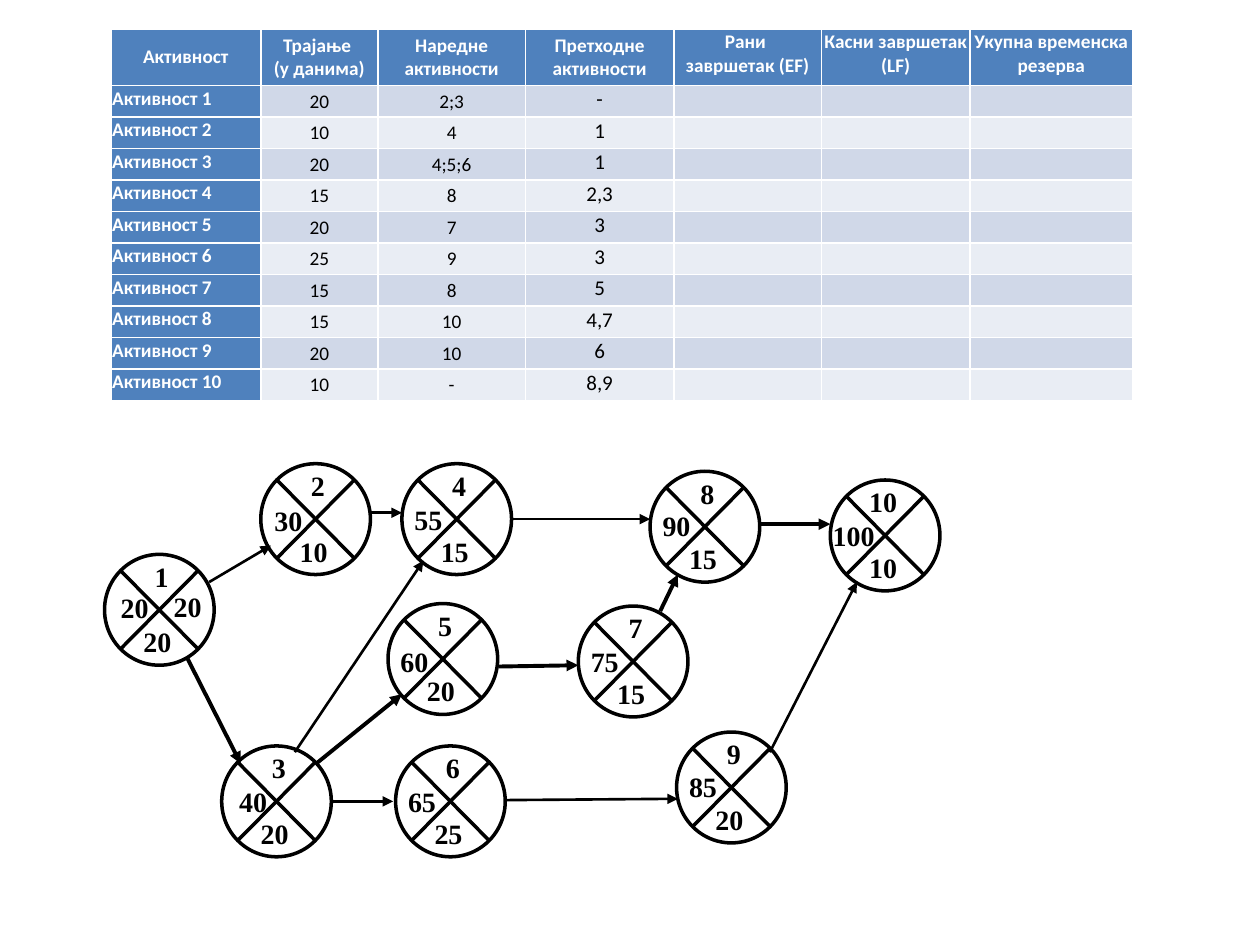
import lxml.etree
import pptx
import pptx.util
import pptx.dml.color
import pptx.enum.shapes
import pptx.enum.text
import pptx.oxml.ns

Inches, Pt = pptx.util.Inches, pptx.util.Pt
RGB = pptx.dml.color.RGBColor
qn = pptx.oxml.ns.qn
CENTER = pptx.enum.text.PP_ALIGN.CENTER
LEFT = pptx.enum.text.PP_ALIGN.LEFT
MIDDLE = pptx.enum.text.MSO_ANCHOR.MIDDLE
TOP = pptx.enum.text.MSO_ANCHOR.TOP
JUNCTION = pptx.enum.shapes.MSO_SHAPE.FLOWCHART_SUMMING_JUNCTION
STRAIGHT = pptx.enum.shapes.MSO_CONNECTOR.STRAIGHT

BLACK = RGB(0x00, 0x00, 0x00)
WHITE = RGB(0xFF, 0xFF, 0xFF)
BLUE = RGB(0x4F, 0x81, 0xBD)
BAND_DARK = RGB(0xD0, 0xD8, 0xE8)
BAND_LIGHT = RGB(0xE9, 0xED, 0xF4)


def set_font(font, color, **values):
    font.color.rgb = color
    for name, value in values.items():
        setattr(font, name, value)


def add_number(shapes, text, x, y, w):
    tf = shapes.add_textbox(Inches(x), Inches(y), Inches(w), Inches(0.37)).text_frame
    tf.word_wrap = True
    r = tf.paragraphs[0].add_run()
    r.text = text
    set_font(r.font, BLACK, size=Pt(16), name="Times New Roman", bold=True)


prs = pptx.Presentation()
prs.slide_width, prs.slide_height = Inches(10), Inches(7.5)
s = prs.slides.add_slide(prs.slide_layouts[6])

# Activity table
header = ["Активност", "Трајање \n(у данима)", "Наредне активности",
          "Претходне активности", "Рани \nзавршетак (ЕF)",
          "Касни завршетак (LF)", "Укупна временска резерва"]
# duration, following activities, preceding activities
activities = [("20", "2;3", "-"), ("10", "4", "1"), ("20", "4;5;6", "1"),
              ("15", "8", "2,3"), ("20", "7", "3"), ("25", "9", "3"),
              ("15", "8", "5"), ("15", "10", "4,7"), ("20", "10", "6"),
              ("10", "-", "8,9")]
rows = [header]
for n, values in enumerate(activities, 1):
    rows.append([f"Активност {n}", *values, "", "", ""])

table = s.shapes.add_table(len(rows), len(header), Inches(0.88), Inches(0.23),
                           Inches(8.11), Inches(2.95)).table
table.first_col = True
for col, w in zip(table.columns, [1.19, 0.93, 1.17, 1.18, 1.17, 1.18, 1.29]):
    col.width = Inches(w)

for i, row in enumerate(rows):
    table.rows[i].height = Inches(0.25 if i else 0.45)
    for j, text in enumerate(row):
        cell = table.cell(i, j)
        heading = i == 0 or j == 0
        centered_rows = j < 4 if i == 0 else j in (1, 2)
        cell.vertical_anchor = MIDDLE if centered_rows else TOP
        for side in ("left", "top", "right", "bottom"):
            setattr(cell, f"margin_{side}", Inches(0.01))
        cell.fill.solid()
        cell.fill.fore_color.rgb = BLUE if heading else BAND_DARK if i % 2 else BAND_LIGHT
        cell.text = text
        for p in cell.text_frame.paragraphs:
            p.alignment = LEFT if i and j == 0 else CENTER
            for r in p.runs:
                set_font(r.font, WHITE if heading else BLACK, name="Calibri", bold=heading,
                         size=Pt(12 if i and j == 3 else 11))
            if not text:  # keeps empty cells from stretching the row
                lxml.etree.SubElement(p._p, qn("a:endParaRPr"), sz="1100")

# Network nodes: left, top, early finish, and the offset of that finish
nodes = [(0.83, 4.40, "20", 0.03, 0.24), (2.07, 3.68, "30", 0.01, 0.27),
         (1.76, 5.92, "40", 0.04, 0.26), (3.19, 3.68, "55", 0, 0.26),
         (3.08, 4.79, "60", 0, 0.28), (3.14, 5.92, "65", 0, 0.26),
         (4.59, 4.81, "75", 0, 0.26), (5.16, 3.74, "90", 0, 0.25),
         (5.37, 5.81, "85", 0, 0.25), (6.59, 3.81, "100", -0.08, 0.26)]
for n, (x, y, finish, dx, dy) in enumerate(nodes, 1):
    shapes = s.shapes.add_group_shape().shapes
    sp = shapes.add_shape(JUNCTION, Inches(x), Inches(y), Inches(0.87), Inches(0.88))
    sp.shadow.inherit = False
    sp.fill.background()
    sp.line.color.rgb = BLACK
    sp.line.width = Pt(2)
    wide = n > 9
    add_number(shapes, str(n), x + (0.21 if wide else 0.3), y - 0.01, 0.42 if wide else 0.27)
    add_number(shapes, activities[n - 1][0], x + 0.21, y + 0.51, 0.52)
    add_number(shapes, finish, x + dx, y + dy, 0.56 if wide else 0.52)
    if n == 1:
        add_number(shapes, "20", x + 0.45, y + 0.23, 0.52)

# Arrows by line width; the critical path is thicker
arrows = {
    1.5: [(1.66, 4.62, 2.15, 4.33), (2.94, 4.07, 3.19, 4.07), (2.34, 5.97, 3.36, 4.45),
          (2.64, 6.36, 3.12, 6.36), (4.07, 4.12, 5.16, 4.12), (6.11, 5.97, 6.80, 4.62),
          (4.01, 6.35, 5.38, 6.34)],
    2.25: [(1.49, 5.23, 1.91, 6.06), (2.51, 6.06, 3.19, 5.51), (3.96, 5.29, 4.59, 5.28),
           (6.03, 4.16, 6.59, 4.16), (5.24, 4.85, 5.38, 4.56)],
}
for width, ends in arrows.items():
    for points in ends:
        c = s.shapes.add_connector(STRAIGHT, *[Inches(v) for v in points])
        c.line.color.rgb = BLACK
        c.line.width = Pt(width)
        lxml.etree.SubElement(c.line._get_or_add_ln(), qn("a:tailEnd"), type="triangle")
        lxml.etree.SubElement(c._element.spPr, qn("a:effectLst"))

prs.save("out.pptx")
